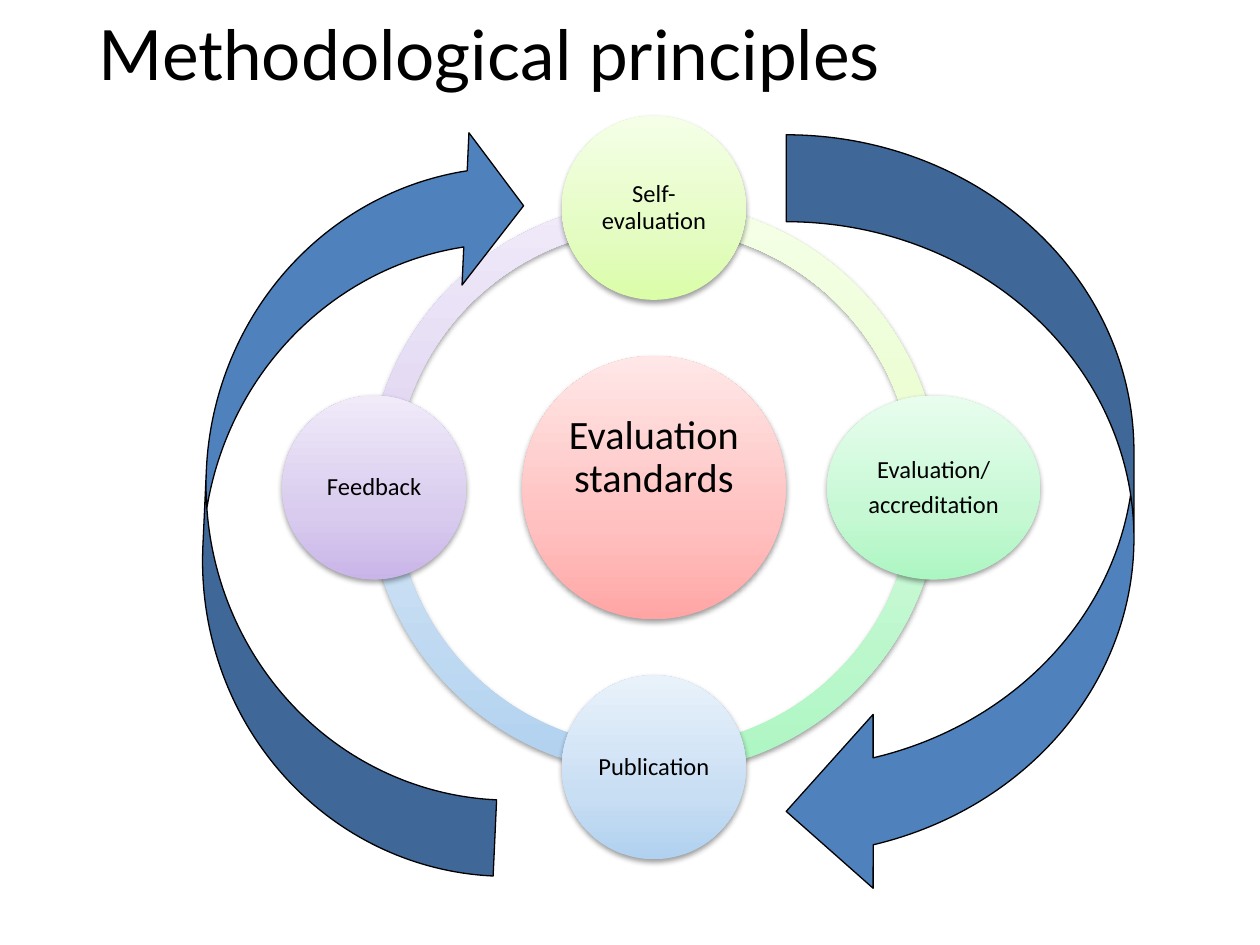
from copy import deepcopy

from lxml import etree
from pptx import Presentation
from pptx import util as u
from pptx.dml.color import RGBColor
from pptx.enum import shapes, text
from pptx.oxml import ns

Inches, Pt = u.Inches, u.Pt
SHAPE = shapes.MSO_SHAPE

COLORS = {"ink": "000000", "arrow": "4F81BD"}
GRADIENTS = {
    "violet": ("C9B5E8", "D8CBEE", "F0EAF9"),
    "blue": ("B0D1EF", "C8DEF3", "E9F2FB"),
    "green": ("ACF6C1", "C5F8D3", "E8FDEE"),
    "lime": ("DAFDA7", "E4FCC2", "F5FFE7"),
    "red": ("FFA6A5", "FFC0BF", "FFE7E7"),
}
STOPS = (0, 0.35, 1)


def rgb(value):
    return RGBColor.from_string(value)


def place(page, kind, box):
    shape = page.shapes.add_shape(kind, *map(Inches, box))
    shape.shadow.inherit = False
    return shape


def add_soft_shadow(shape):
    effects = shape._element.spPr.find(ns.qn("a:effectLst"))
    shadow = etree.SubElement(effects, ns.qn("a:outerShdw"), blurRad="40000",
                              dist="20000", dir="5400000", rotWithShape="0")
    color = etree.SubElement(shadow, ns.qn("a:srgbClr"), val=COLORS["ink"])
    etree.SubElement(color, ns.qn("a:alpha"), val="38000")


def shade(shape, name):
    shape.line.fill.background()
    shape.fill.gradient()
    shape.fill.gradient_angle = 90
    stop_list = shape._element.spPr.find(".//" + ns.qn("a:gsLst"))
    stop_list.append(deepcopy(stop_list[0]))
    for stop, position, color in zip(shape.fill.gradient_stops, STOPS, GRADIENTS[name]):
        stop.position = position
        stop.color.rgb = rgb(color)
    add_soft_shadow(shape)


def add_label(page, box, lines, size, font="Calibri", inset=0.02, bottom=None, spacing=0.9):
    frame = page.shapes.add_textbox(*map(Inches, box)).text_frame
    frame.word_wrap = True
    frame.vertical_anchor = text.MSO_ANCHOR.MIDDLE
    frame.margin_left = frame.margin_right = frame.margin_top = Inches(inset)
    frame.margin_bottom = Inches(inset if bottom is None else bottom)
    for index, line in enumerate(lines):
        para = frame.add_paragraph() if index else frame.paragraphs[0]
        para.alignment = text.PP_ALIGN.CENTER
        para.line_spacing = spacing
        if index < len(lines) - 1:
            para.space_after = Pt(size * 0.35)
        span = para.add_run()
        span.text = line
        span.font.size = Pt(size)
        span.font.name = font
        span.font.color.rgb = rgb(COLORS["ink"])


def add_title(page, box):
    add_label(page, box, ["Methodological principles"], 39.6, "Lato", 0.05, spacing=1)


def add_ring(page, box):
    quarters = (("violet", 108, 162), ("blue", 54, 108), ("green", 0, 54), ("lime", 162, 0))
    for name, start, end in quarters:
        arc = place(page, SHAPE.BLOCK_ARC, box)
        for index, value in enumerate((start, end, 0.046)):
            arc.adjustments[index] = value
        shade(arc, name)


def add_disc(page, center, size, color, lines, font_size, **label):
    (x, y), (width, height) = center, size
    shade(place(page, SHAPE.OVAL, (x - width / 2, y - height / 2, width, height)), color)
    inner_w, inner_h = width * 0.71, height * 0.71
    add_label(page, (x - inner_w / 2, y - inner_h / 2, inner_w, inner_h),
              lines, font_size, **label)


def add_cycle(page, box):
    left, top, width, height = box
    x, y = left + width / 2, top + height / 2
    reach = 2.22
    add_ring(page, box)
    add_disc(page, (x, y), (2.09, 2.09), "red", ["Evaluation standards"], 23,
             inset=0.03, bottom=0.5)
    stages = (
        (0, -1, 1.46, "lime", ["Self-evaluation"]),
        (1, 0, 1.69, "green", ["Evaluation/", "accreditation"]),
        (0, 1, 1.46, "blue", ["Publication"]),
        (-1, 0, 1.46, "violet", ["Feedback"]),
    )
    for dx, dy, disc_width, color, lines in stages:
        add_disc(page, (x + dx * reach, y + dy * reach), (disc_width, 1.46), color, lines, 14)


def add_turn_arrow(page, box, head=0.25, rotation=0):
    arrow = place(page, SHAPE.CURVED_LEFT_ARROW, box)
    arrow.adjustments[2] = head
    arrow.rotation = rotation
    arrow.fill.solid()
    arrow.fill.fore_color.rgb = rgb(COLORS["arrow"])
    arrow.line.color.rgb = rgb(COLORS["ink"])
    arrow.line.width = Pt(0.75)


def main():
    deck = Presentation()
    deck.slide_width, deck.slide_height = Inches(10), Inches(7.5)
    page = deck.slides.add_slide(deck.slide_layouts[6])
    add_title(page, (0.42, 0.02, 6.93, 0.8))
    add_cycle(page, (2.92, 1.6, 4.54, 4.54))
    add_turn_arrow(page, (6.24, 1.07, 2.76, 6.06))
    add_turn_arrow(page, (1.63, 0.97, 2.42, 5.93), head=0.19, rotation=182.6)
    deck.save("out.pptx")


if __name__ == "__main__":
    main()
